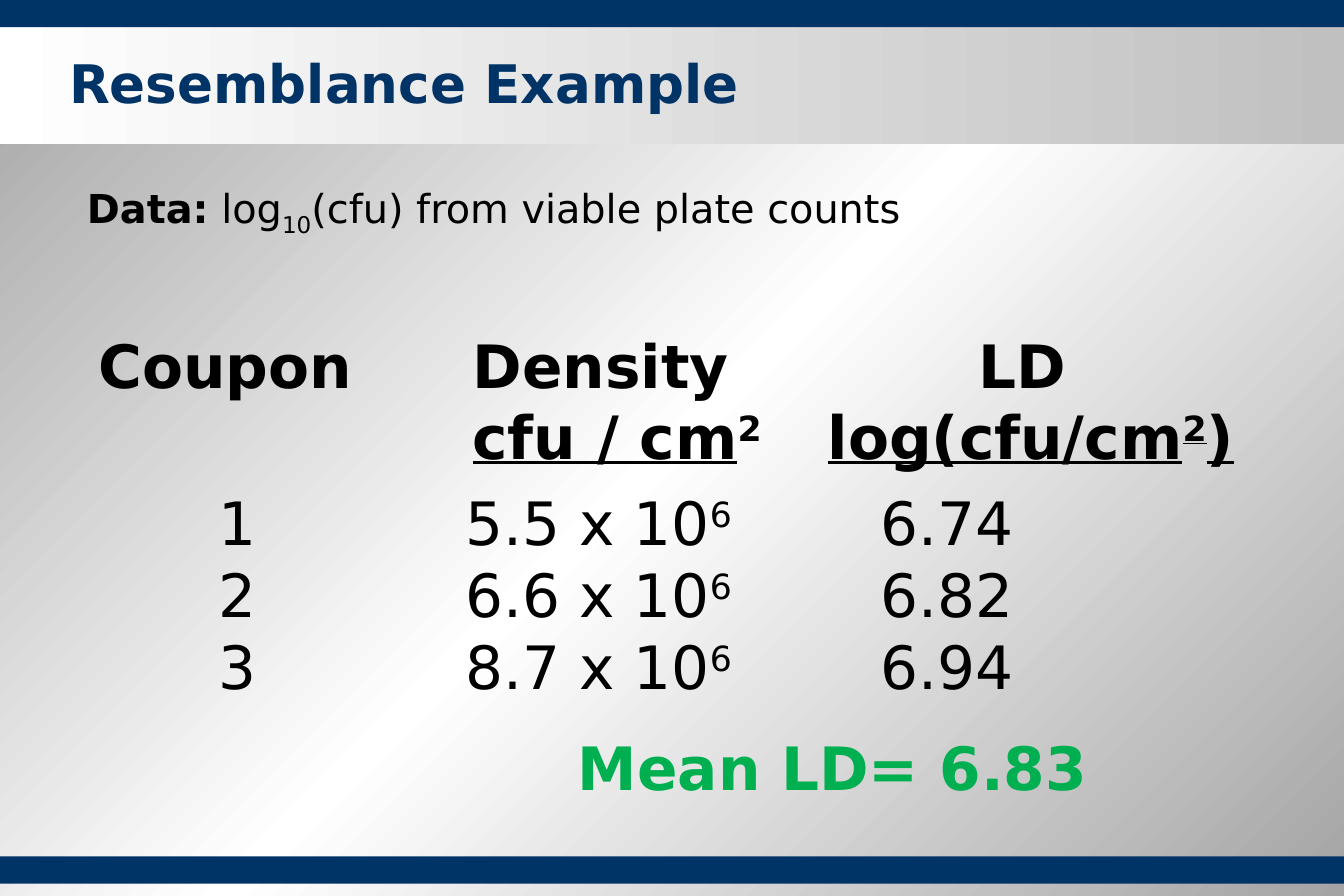
from copy import deepcopy

from lxml import etree
from pptx import Presentation
from pptx import util as u
from pptx.dml.color import RGBColor
from pptx.enum import shapes, text
from pptx.oxml.ns import qn

NAVY, BLACK, GREEN = "003366", "000000", "00B050"


def rgb(hex_color):
    return RGBColor.from_string(hex_color)


def add_text(box, lines, size, color=BLACK, bold=False):
    """Each line is (tab stops in cm, runs); each run is (text, format changes)."""
    tb = s.shapes.add_textbox(*[u.Cm(v) for v in box])
    tf = tb.text_frame
    tf.word_wrap = True
    tf.auto_size = text.MSO_AUTO_SIZE.SHAPE_TO_FIT_TEXT
    for i, (tabs, runs) in enumerate(lines):
        p = tf.add_paragraph() if i else tf.paragraphs[0]
        if tabs:
            tab_list = etree.SubElement(p._p.get_or_add_pPr(), qn("a:tabLst"))
            for pos in tabs:
                etree.SubElement(tab_list, qn("a:tab"), pos=str(u.Cm(pos)), algn="l")
        for words, fmt in runs:
            r = p.add_run()
            r.text = words
            r.font.name = "DejaVu Sans"
            r.font.size = u.Pt(size)
            r.font.bold = fmt.get("bold", bold)
            r.font.underline = fmt.get("underline")
            r.font.color.rgb = rgb(color)
            if "base" in fmt:
                r.font._element.set("baseline", str(fmt["base"] * 1000))


prs = Presentation()
prs.slide_width, prs.slide_height = u.Cm(28.58), u.Cm(19.05)
s = prs.slides.add_slide(prs.slide_layouts[6])

# Background: grey, white, grey on the diagonal
fill = s.background.fill
fill.gradient()
fill.gradient_angle = 315
stop_list = s._element.find(".//" + qn("a:gsLst"))
stop_list.append(deepcopy(stop_list[-1]))
for stop, pos, color in zip(fill.gradient_stops, (0, 0.5, 1), ("A4A4A4", "FFFFFF", "A4A4A4")):
    stop.position = pos
    stop.color.rgb = rgb(color)

# Bands: footer, title band, header
for top, height, color in ((18.21, 0.58, NAVY), (0.53, 2.54, None), (0, 0.58, NAVY)):
    sp = s.shapes.add_shape(shapes.MSO_SHAPE.RECTANGLE, 0, u.Cm(top), prs.slide_width, u.Cm(height))
    sp.shadow.inherit = False
    sp.line.fill.background()
    if color:
        sp.fill.solid()
        sp.fill.fore_color.rgb = rgb(color)
    else:
        sp.fill.gradient()
        sp.fill.gradient_angle = 0
        for stop, pos, shade in zip(sp.fill.gradient_stops, (0, 1), ("FFFFFF", "C0C0C0")):
            stop.position = pos
            stop.color.rgb = rgb(shade)

# Title
add_text((1.22, 0.94, 26.29, 1.63), [((), [("Resemblance Example", {})])], 32, NAVY, True)

# Column headings
line = {"underline": True}
headings = [
    ((7.95, 18.7), [("Coupon\tDensity\tLD", {})]),
    ((5.74, 7.95, 15.5), [
        ("\t", line), ("\t", {}), ("cfu / cm", line), ("2", {"base": 30}), ("\t", {}),
        ("log(cfu/cm", line), ("2", {"underline": True, "base": 30}), (")", line)]),
]
add_text((1.85, 6.86, 25.63, 3.33), headings, 36, bold=True)

# Coupon data
data = [("1", "5.5", "6.74"), ("2", "6.6", "6.82"), ("3", "8.7", "6.94")]
rows = [((2.42, 7.67, 16.5),
         [(f"\t{coupon}\t{density} x 10", {}), ("6", {"base": 30}), (f"\t{ld}", {})])
        for coupon, density, ld in data]
add_text((1.98, 10.21, 22.23, 4.88), rows, 36)

# Mean
add_text((12.04, 15.42, 12.29, 1.8), [((), [("Mean LD= 6.83", {})])], 36, GREEN, True)

# Data description
add_text((1.6, 3.78, 22.96, 1.27), [((), [
    ("Data:", {"bold": True}), (" log", {}), ("10", {"base": -25}),
    ("(cfu) from viable plate counts", {})])], 24)

prs.save("out.pptx")
